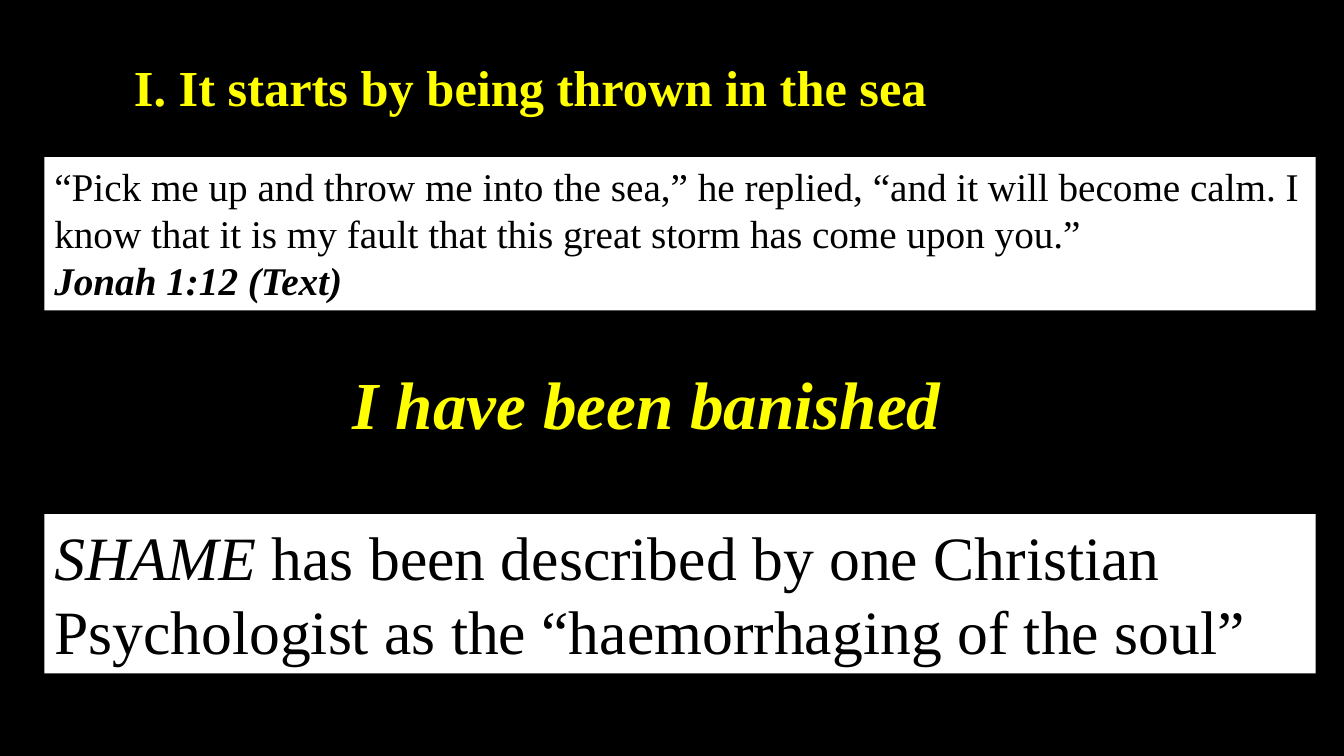
from pptx import Presentation
from pptx.dml.color import RGBColor
from pptx.enum.shapes import MSO_SHAPE
from pptx.enum.text import MSO_ANCHOR, MSO_AUTO_SIZE, PP_ALIGN
from pptx.util import Inches, Pt

HUES = {"back": "000000", "panel": "FFFFFF", "ink": "000000", "title": "FFFF00"}
FONT = "Times New Roman"
LEFT, WIDE = 0.44, 12.61

VERSE = [
    [("“Pick me up and throw me into the sea,” he replied, “and it will become calm. "
      "I know that it is my fault that this great storm has come upon you.”", "")],
    [("Jonah 1:12 (Text)", "bi")],
]
SHAME = [[
    ("SHAME", "i"),
    (" has been described by one Christian Psychologist as the “haemorrhaging of the soul”", ""),
]]
PANELS = [
    (VERSE, (LEFT, 1.56, WIDE, 1.52), 28),
    (SHAME, (LEFT, 5.1, WIDE, 1.58), 44),
]
TITLES = [
    ([[("I. It starts by being thrown in the sea ", "b")]],
     (1.23, 0.51, 8.27, 0.71), 36, PP_ALIGN.LEFT, False),
    ([[("I have been banished ", "bi")]],
     (3.32, 3.55, 6.19, 0.91), 48, PP_ALIGN.CENTER, True),
]


def color(name):
    """Return the named colour."""
    return RGBColor.from_string(HUES[name])


def write(shape, paras, size, hue, align=PP_ALIGN.LEFT, wrap=True):
    """Fill a shape with styled paragraphs."""
    frame = shape.text_frame
    frame.word_wrap = wrap
    frame.auto_size = MSO_AUTO_SIZE.SHAPE_TO_FIT_TEXT
    frame.vertical_anchor = MSO_ANCHOR.TOP
    for num, runs in enumerate(paras):
        para = frame.add_paragraph() if num else frame.paragraphs[0]
        para.alignment = align
        for text, style in runs:
            run = para.add_run()
            run.text = text
            font = run.font
            font.name, font.size = FONT, Pt(size)
            font.bold, font.italic = "b" in style, "i" in style
            font.color.rgb = color(hue)


def main():
    """Build and save the slide."""
    deck = Presentation()
    deck.slide_width, deck.slide_height = Inches(13.33), Inches(7.5)
    slide = deck.slides.add_slide(deck.slide_layouts[6])
    fill = slide.background.fill
    fill.solid()
    fill.fore_color.rgb = color("back")
    for paras, box, size in PANELS:
        panel = slide.shapes.add_shape(MSO_SHAPE.RECTANGLE, *map(Inches, box))
        panel.shadow.inherit = False
        panel.fill.solid()
        panel.fill.fore_color.rgb = color("panel")
        panel.line.fill.background()
        write(panel, paras, size, "ink")
    for paras, box, size, align, wrap in TITLES:
        title = slide.shapes.add_textbox(*map(Inches, box))
        write(title, paras, size, "title", align, wrap)
    deck.save("out.pptx")


if __name__ == "__main__":
    main()
